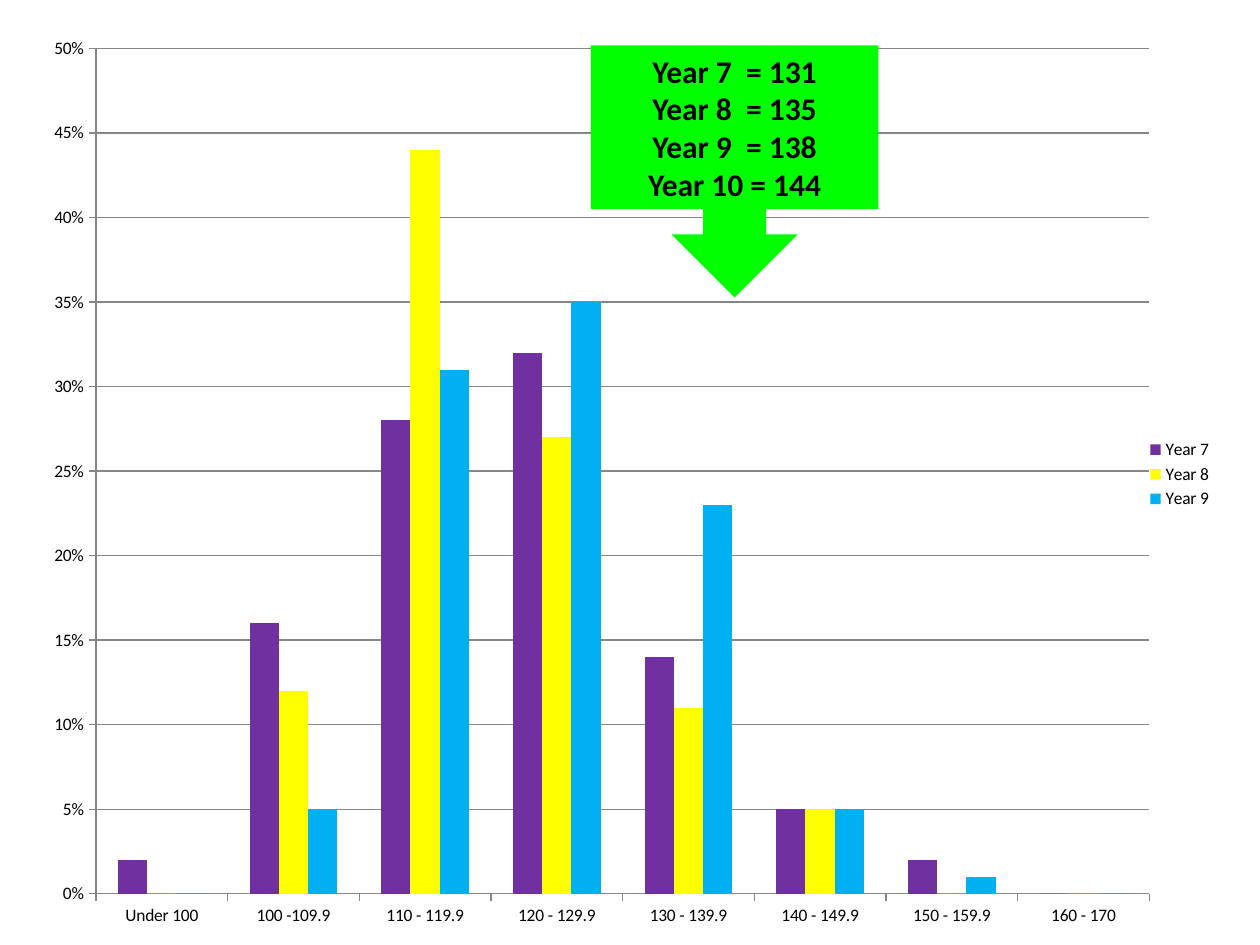
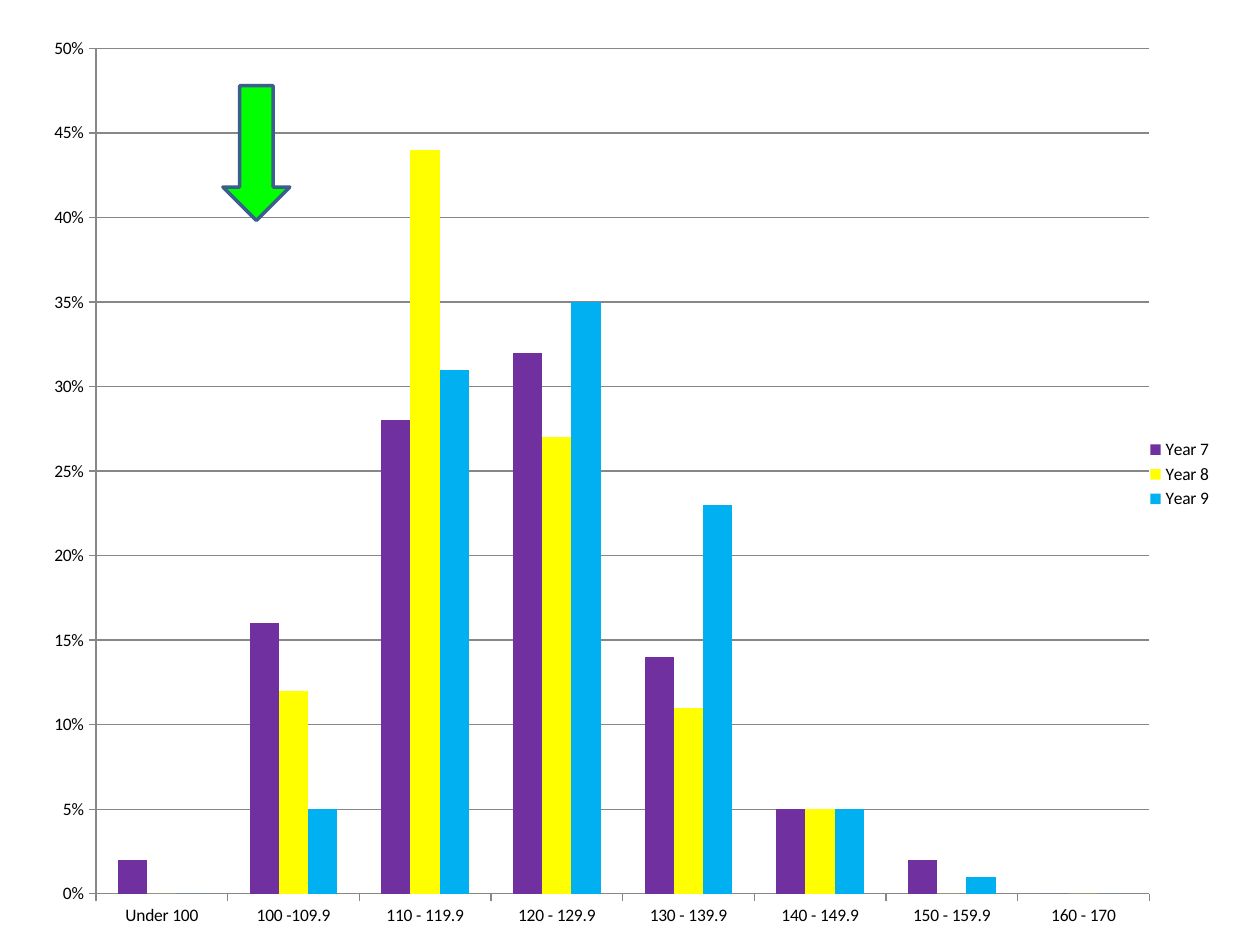
from dataclasses import dataclass

from lxml import etree
from pptx import Presentation
from pptx.chart.chart import Chart
from pptx.chart.data import CategoryChartData
from pptx.dml.color import RGBColor
from pptx.enum.chart import XL_CHART_TYPE, XL_LEGEND_POSITION, XL_TICK_MARK
from pptx.enum.shapes import MSO_SHAPE
from pptx.enum.text import MSO_ANCHOR, PP_ALIGN
from pptx.oxml.ns import qn
from pptx.slide import Slide
from pptx.util import Pt

FONT = "Calibri"
BLACK = "000000"
GREEN = "00FF00"
ARROW_OUTLINE = "3A5F8C"
AXIS_GREY = "878787"

SCORE_BANDS = ["Under 100", "100 -109.9", "110 - 119.9", "120 - 129.9",
               "130 - 139.9", "140 - 149.9", "150 - 159.9", "160 - 170"]
PLOT_AREA = {"x": 0.03, "y": 0.025, "w": 0.905, "h": 0.943}


@dataclass(frozen=True)
class YearGroup:
    name: str
    shares: tuple[float, ...]
    color: str


@dataclass(frozen=True)
class Marker:
    """A green pointer laid over the chart, in points."""
    preset: MSO_SHAPE
    left: float
    top: float
    width: float
    height: float
    lines: tuple[str, ...] = ()
    outline: str | None = None


YEAR_GROUPS = [
    YearGroup("Year 7", (0.02, 0.16, 0.28, 0.32, 0.14, 0.05, 0.02, 0), "7030A0"),
    YearGroup("Year 8", (0, 0.12, 0.44, 0.27, 0.11, 0.05, 0, 0), "FFFF00"),
    YearGroup("Year 9", (0, 0.05, 0.31, 0.35, 0.23, 0.05, 0.01, 0), "00B0F0"),
]

# One slide for each marker
MARKERS = [
    Marker(MSO_SHAPE.DOWN_ARROW_CALLOUT, 337.7, 26, 164.2, 144,
           lines=("Year 7  = 131", "Year 8  = 135", "Year 9  = 138", "Year 10 = 144")),
    Marker(MSO_SHAPE.DOWN_ARROW, 127.4, 49, 38.2, 77, outline=ARROW_OUTLINE),
]


def rgb(color: str) -> RGBColor:
    return RGBColor.from_string(color)


def fix_plot_area(chart: Chart) -> None:
    """Pin the inner plot area to fractions of the chart frame."""
    plot_area = chart.plots[0]._element.getparent()
    for old_layout in plot_area.findall(qn("c:layout")):
        plot_area.remove(old_layout)
    layout = etree.Element(qn("c:layout"))
    plot_area.insert(0, layout)
    manual = etree.SubElement(layout, qn("c:manualLayout"))
    settings = {"layoutTarget": "inner", "xMode": "edge", "yMode": "edge", **PLOT_AREA}
    for tag, value in settings.items():
        etree.SubElement(manual, qn(f"c:{tag}"), val=str(value))


def add_score_chart(slide: Slide) -> None:
    chart_data = CategoryChartData(number_format="0%")
    chart_data.categories = SCORE_BANDS
    for group in YEAR_GROUPS:
        chart_data.add_series(group.name, group.shares)
    chart = slide.shapes.add_chart(XL_CHART_TYPE.COLUMN_CLUSTERED, Pt(31), Pt(15),
                                   Pt(669), Pt(514), chart_data).chart
    chart.has_title = False
    chart.font.name = FONT
    chart.font.size = Pt(10)
    chart.font.color.rgb = rgb(BLACK)

    chart.has_legend = True
    chart.legend.position = XL_LEGEND_POSITION.RIGHT
    chart.legend.include_in_layout = False

    plot = chart.plots[0]
    plot.gap_width = 150
    plot.overlap = 0
    plot.vary_by_categories = False
    for series, group in zip(plot.series, YEAR_GROUPS):
        series.format.fill.solid()
        series.format.fill.fore_color.rgb = rgb(group.color)

    value_axis = chart.value_axis
    value_axis.minimum_scale = 0
    value_axis.maximum_scale = 0.5
    value_axis.major_unit = 0.05
    value_axis.has_major_gridlines = True
    value_axis.tick_labels.number_format = "0%"
    value_axis.tick_labels.number_format_is_linked = False
    for axis in (chart.category_axis, value_axis):
        axis.major_tick_mark = XL_TICK_MARK.OUTSIDE
        axis.minor_tick_mark = XL_TICK_MARK.NONE
    for part in (chart.category_axis, value_axis, value_axis.major_gridlines):
        part.format.line.color.rgb = rgb(AXIS_GREY)
        part.format.line.width = Pt(0.75)
    fix_plot_area(chart)


def add_marker(slide: Slide, marker: Marker) -> None:
    shape = slide.shapes.add_shape(marker.preset, Pt(marker.left), Pt(marker.top),
                                   Pt(marker.width), Pt(marker.height))
    shape.shadow.inherit = False
    shape.fill.solid()
    shape.fill.fore_color.rgb = rgb(GREEN)
    if marker.outline:
        shape.line.color.rgb = rgb(marker.outline)
        shape.line.width = Pt(2)
    else:
        shape.line.fill.background()
    if not marker.lines:
        return
    text_frame = shape.text_frame
    text_frame.text = "\n".join(marker.lines)
    text_frame.word_wrap = True
    text_frame.vertical_anchor = MSO_ANCHOR.MIDDLE
    for paragraph in text_frame.paragraphs:
        paragraph.alignment = PP_ALIGN.CENTER
        for run in paragraph.runs:
            run.font.name = FONT
            run.font.size = Pt(18)
            run.font.bold = True
            run.font.color.rgb = rgb(BLACK)


def main() -> None:
    presentation = Presentation()
    presentation.slide_width = Pt(720)
    presentation.slide_height = Pt(540)
    blank_layout = presentation.slide_layouts.get_by_name("Blank")
    for marker in MARKERS:
        slide = presentation.slides.add_slide(blank_layout)
        add_score_chart(slide)
        add_marker(slide, marker)
    presentation.save("out.pptx")


if __name__ == "__main__":
    main()
